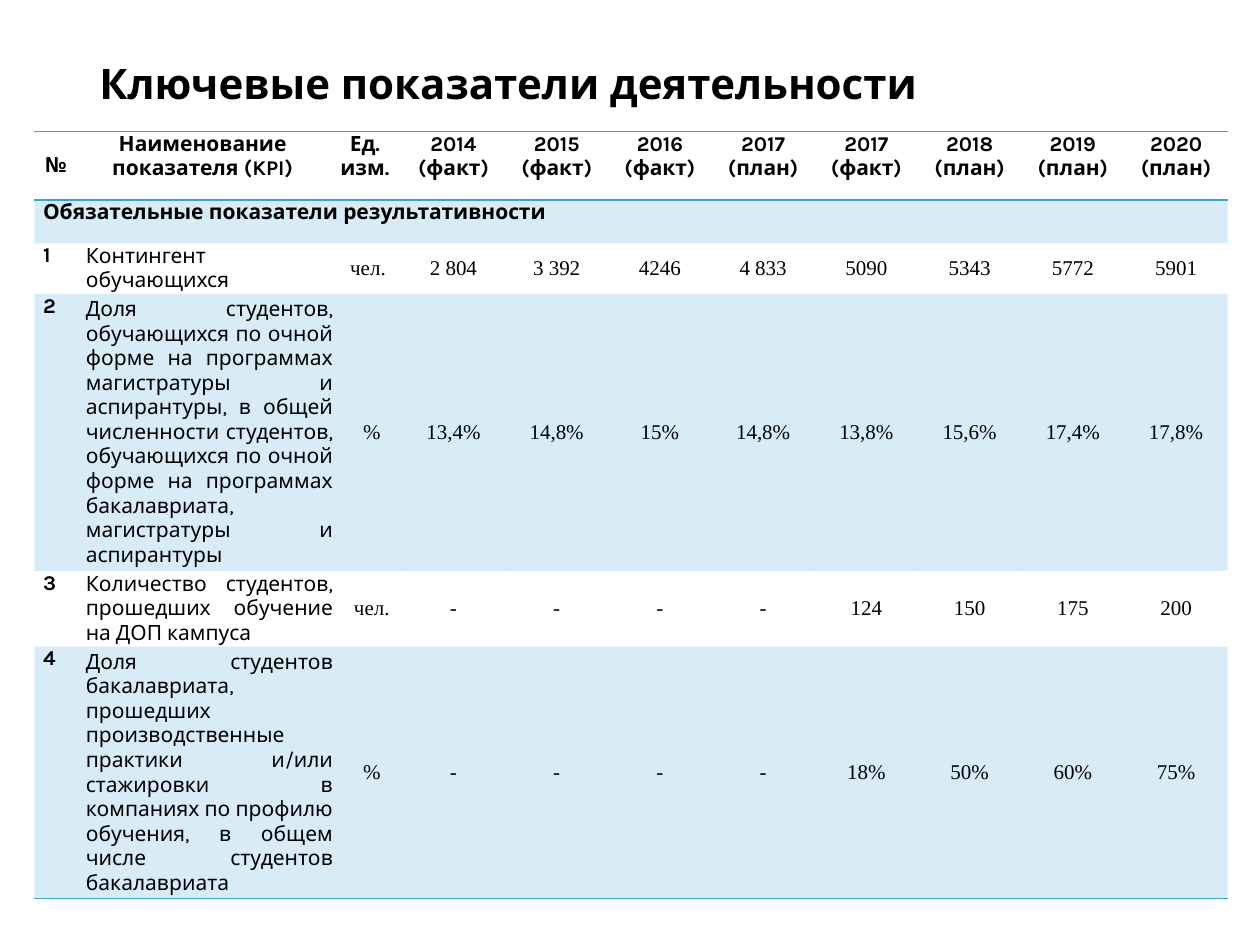
import pptx
import pptx.util
import pptx.dml.color
import pptx.enum.text
import lxml.etree
from dataclasses import dataclass

Pt = pptx.util.Pt
RGB = pptx.dml.color.RGBColor.from_string
ALIGN = pptx.enum.text.PP_ALIGN
ANCHOR = pptx.enum.text.MSO_ANCHOR
NS = "http://schemas.openxmlformats.org/drawingml/2006/main"


@dataclass
class Theme:
    text: str = "000000"
    accent: str = "3AA4D9"
    tint: int = 20
    title: float = 24
    body: float = 12
    font: str = "Karla"
    number_font: str = "Times New Roman"


theme = Theme()


def write(tf, text, size=theme.body, font=theme.font, bold=False, align=ALIGN.LEFT):
    tf.word_wrap = True
    for i, line in enumerate(text.split("\n")):
        p = tf.paragraphs[0] if i == 0 else tf.add_paragraph()
        p.alignment = align
        r = p.add_run()
        r.text = line
        r.font.size, r.font.name, r.font.bold = Pt(size), font, bold
        r.font.color.rgb = RGB(theme.text)


def border(cell, side):
    ln = lxml.etree.SubElement(cell._tc.get_or_add_tcPr(), f"{{{NS}}}ln{side}", w=str(Pt(1)))
    fill = lxml.etree.SubElement(ln, f"{{{NS}}}solidFill")
    lxml.etree.SubElement(fill, f"{{{NS}}}srgbClr", val=theme.accent)


prs = pptx.Presentation()
prs.slide_width, prs.slide_height = Pt(720), Pt(540)
s = prs.slides.add_slide(prs.slide_layouts[6])

# Title
sp = s.shapes.add_textbox(Pt(49.7), Pt(28.8), Pt(620.6), Pt(37.4))
sp.text_frame.vertical_anchor = ANCHOR.MIDDLE
write(sp.text_frame, "Ключевые показатели деятельности", size=theme.title, bold=True)

# Table content
years = ["2014\n(факт)", "2015\n(факт)", "2016\n(факт)", "2017\n(план)",
         "2017\n(факт)", "2018\n(план)", "2019\n(план)", "2020\n(план)"]
header = ["№", "Наименование показателя (KPI)", "Ед. изм.", None] + years
section = ["Обязательные показатели результативности"] + [None] * 11
indicators = [
    ("Контингент обучающихся", "чел.",
     ["2 804", "3 392", "4246", "4 833", "5090", "5343", "5772", "5901"]),
    ("Доля студентов, обучающихся по очной форме на программах магистратуры и "
     "аспирантуры, в общей численности студентов, обучающихся по очной форме на "
     "программах бакалавриата, магистратуры и аспирантуры", "%",
     ["13,4%", "14,8%", "15%", "14,8%", "13,8%", "15,6%", "17,4%", "17,8%"]),
    ("Количество студентов, прошедших обучение на ДОП кампуса", "чел.",
     ["-", "-", "-", "-", "124", "150", "175", "200"]),
    ("Доля студентов бакалавриата, прошедших производственные практики и/или "
     "стажировки в компаниях по профилю обучения, в общем числе студентов "
     "бакалавриата", "%",
     ["-", "-", "-", "-", "18%", "50%", "60%", "75%"]),
]
rows = [header, section]
for n, (name, unit, values) in enumerate(indicators, 1):
    rows.append([str(n), name, None, unit] + values)

# Table grid
widths = [24.5, 143.2, 7.9, 34.4] + [59] * len(years)
heights = [39, 24.8, 28, 154, 42, 140]
frame = s.shapes.add_table(len(rows), len(widths), Pt(19.7), Pt(75.3),
                           Pt(sum(widths)), Pt(sum(heights)))
tbl = frame.table
tbl.first_row = tbl.horz_banding = False
style = tbl._tbl.tblPr.find(f"{{{NS}}}tableStyleId")
style.text = "{2D5ABB26-0587-4C30-8999-92F81FD0307C}"  # no style, no grid
for column, width in zip(tbl.columns, widths):
    column.width = Pt(width)
for row, height in zip(tbl.rows, heights):
    row.height = Pt(height)

# Merged cells
tbl.cell(0, 2).merge(tbl.cell(0, 3))
tbl.cell(1, 0).merge(tbl.cell(1, len(widths) - 1))
for i in range(2, len(rows)):
    tbl.cell(i, 1).merge(tbl.cell(i, 2))

# Cells: rules, tinted odd rows, text
for i, row in enumerate(rows):
    for j, text in enumerate(row):
        cell = tbl.cell(i, j)
        if i == 0:
            border(cell, "T")
        if i in (0, len(rows) - 1):
            border(cell, "B")
        if i % 2:
            cell.fill.solid()
            cell.fill.fore_color.rgb = RGB(theme.accent)
            color = cell._tc.tcPr.find(f"{{{NS}}}solidFill/{{{NS}}}srgbClr")
            lxml.etree.SubElement(color, f"{{{NS}}}alpha", val=str(theme.tint * 1000))
        else:
            cell.fill.background()
        if text is None:
            continue
        cell.margin_left = cell.margin_right = Pt(4.9)
        cell.margin_top = cell.margin_bottom = 0
        centred = j == 0 if i == 0 else i > 1 and j > 0
        cell.vertical_anchor = ANCHOR.MIDDLE if centred else ANCHOR.TOP
        if i == 0 or (i > 2 and j > 2) or j > 3:
            align = ALIGN.CENTER
        else:
            align = ALIGN.JUSTIFY if i > 2 else ALIGN.LEFT
        number = i > 1 and j > 2
        write(cell.text_frame, text, bold=i < 2 or j == 0, align=align,
              font=theme.number_font if number else theme.font)

prs.save("out.pptx")
